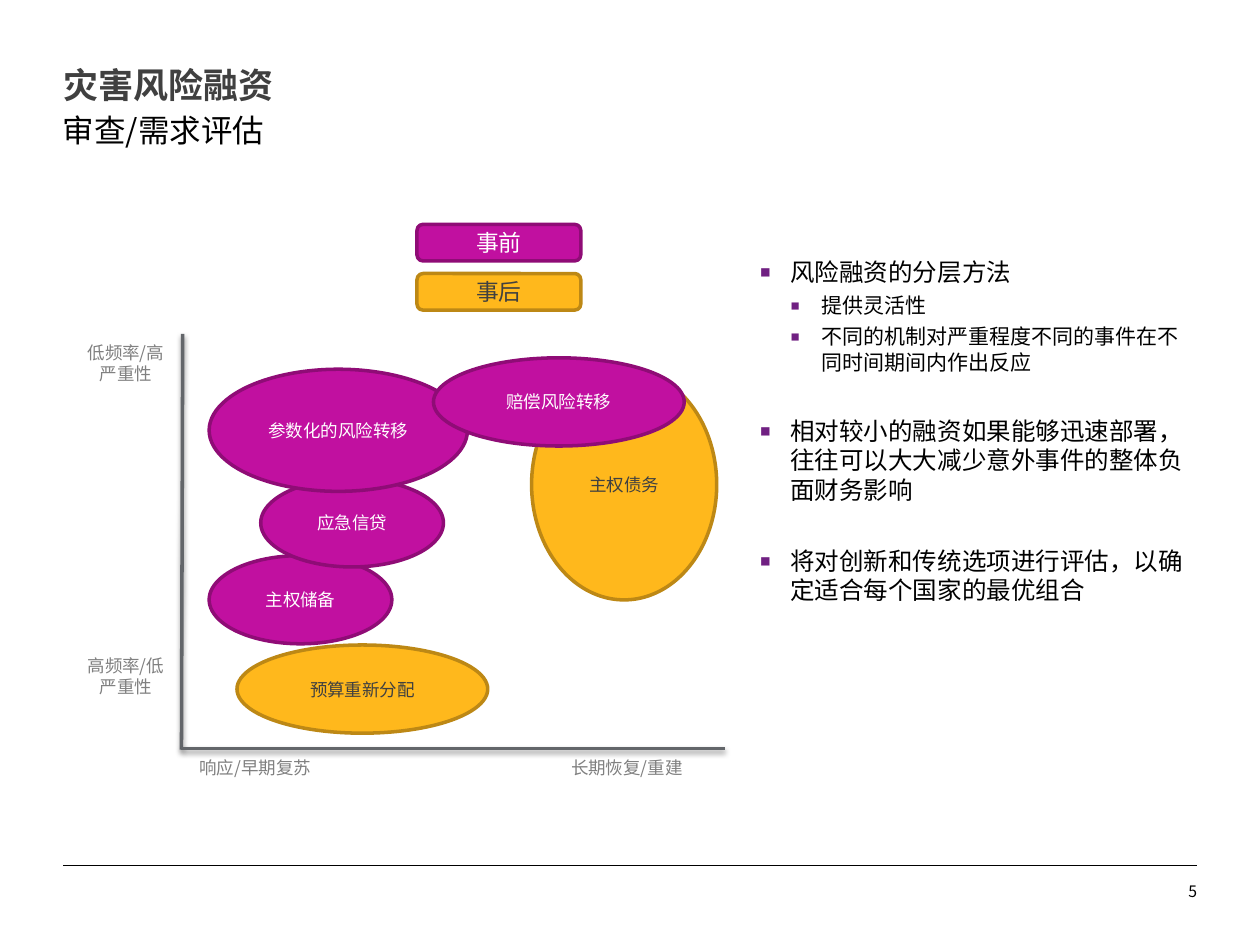
from lxml.etree import SubElement
from pptx import Presentation
from pptx.dml.color import RGBColor
from pptx.enum.shapes import MSO_CONNECTOR, MSO_SHAPE
from pptx.enum.text import MSO_ANCHOR, MSO_AUTO_SIZE, PP_ALIGN
from pptx.oxml.ns import qn
from pptx.util import Pt

FONT = "Noto Sans CJK SC"
BLACK, DARK, GREY, AXIS, BULLET = "000000", "404040", "808080", "63666A", "702082"

# Content: kinds hold fill, outline and text colour
KINDS = {
    "ex ante": ("C110A0", "8F0C76", "FFFFFF"),
    "ex post": ("FFB81C", "BD8815", DARK),
}
# text, kind, left, top, width, height; from back to front
ELLIPSES = [
    ("主权债务", "ex post", 303.8, 211, 105.8, 131.8),
    ("主权储备", "ex ante", 119.5, 317.5, 104.4, 50.4),
    ("应急信贷", "ex ante", 149, 273.6, 104.4, 50.4),
    ("参数化的风险转移", "ex ante", 119.5, 211, 147.6, 69.8),
    ("预算重新分配", "ex post", 135.4, 368.6, 143.3, 50.4),
    ("赔偿风险转移", "ex ante", 247.7, 204.5, 143.3, 50.4),
]
LEGEND = [("事前", "ex ante"), ("事后", "ex post")]
AXES = [(104.4, 190.8, 103.7, 428.4), (414, 427.7, 103.7, 427.7)]
AXIS_LABELS = [
    ("响应/早期复苏", 104.4, 429.1, 82.8, 32.4),
    ("长期恢复/重建", 303.8, 429.1, 108.7, 32.4),
    ("低频率/高严重性", 41, 192.2, 61.9, 70.6),
    ("高频率/低严重性", 41, 370.8, 61.9, 58.3),
]
# text, level, space after
POINTS = [
    ("风险融资的分层方法", 0, 3.5),
    ("提供灵活性", 1, 3.5),
    ("不同的机制对严重程度不同的事件在不同时间期间内作出反应", 1, 23.8),
    ("相对较小的融资如果能够迅速部署，往往可以大大减少意外事件的整体负面财务影响", 0, 23.8),
    ("将对创新和传统选项进行评估，以确定适合每个国家的最优组合", 0, 0),
]


def rgb(value):
    return RGBColor.from_string(value)


def write(p, text, size=10, color=BLACK, bold=False, align=PP_ALIGN.LEFT, after=0):
    p.alignment = align
    p.line_spacing = Pt(size * 1.2)
    p.space_before, p.space_after = Pt(0), Pt(after)
    r = p.add_run()
    r.text = text
    r.font.name, r.font.size, r.font.bold = FONT, Pt(size), bold
    r.font.color.rgb = rgb(color)
    SubElement(r.font._element, qn("a:ea"), typeface=FONT)


def frame(shape, inset=(0, 0), anchor=MSO_ANCHOR.TOP):
    tf = shape.text_frame
    tf.word_wrap = True
    tf.auto_size = MSO_AUTO_SIZE.NONE
    tf.vertical_anchor = anchor
    tf.margin_left = tf.margin_right = Pt(inset[0])
    tf.margin_top = tf.margin_bottom = Pt(inset[1])
    return tf


def text_box(box, inset=(0, 0), anchor=MSO_ANCHOR.TOP):
    return frame(s.shapes.add_textbox(*map(Pt, box)), inset, anchor)


def filled(preset, text, kind, box, size=10):
    fill, outline, color = KINDS[kind]
    sp = s.shapes.add_shape(preset, *map(Pt, box))
    sp.shadow.inherit = False
    sp.fill.solid()
    sp.fill.fore_color.rgb = rgb(fill)
    sp.line.color.rgb = rgb(outline)
    sp.line.width = Pt(2)
    tf = frame(sp, anchor=MSO_ANCHOR.MIDDLE)
    write(tf.paragraphs[0], text, size=size, color=color, align=PP_ALIGN.CENTER)


def line(ends, color, width):
    c = s.shapes.add_connector(MSO_CONNECTOR.STRAIGHT, *map(Pt, ends))
    c.line.color.rgb = rgb(color)
    c.line.width = Pt(width)
    return SubElement(c._element.spPr, qn("a:effectLst"))


def add_shadow(effects):
    shadow = SubElement(effects, qn("a:outerShdw"), blurRad=str(Pt(3.1)),
                        dist=str(Pt(1.6)), dir="5400000", rotWithShape="0")
    clr = SubElement(shadow, qn("a:srgbClr"), val=BLACK)
    SubElement(clr, qn("a:alpha"), val="38000")


def add_bullet(p, level):
    pPr = p._p.get_or_add_pPr()
    pPr.set("marL", str(Pt(22.5 + 18 * level)))
    pPr.set("indent", str(Pt(-22.5)))
    clr = SubElement(pPr, qn("a:buClr"))
    SubElement(clr, qn("a:srgbClr"), val=BULLET)
    SubElement(pPr, qn("a:buSzPct"), val="125000")
    SubElement(pPr, qn("a:buFont"), typeface=FONT)
    SubElement(pPr, qn("a:buChar"), char="▪")


prs = Presentation()
prs.slide_width, prs.slide_height = Pt(720), Pt(540)
s = prs.slides.add_slide(prs.slide_layouts[5])

# Title, subtitle and footer
title = s.shapes.title
title.left, title.top, title.width, title.height = map(Pt, (36, 36, 648, 24.5))
write(frame(title).paragraphs[0], "灾害风险融资", size=20, color=DARK, bold=True)
write(text_box((36, 63.4, 648, 21.6)).paragraphs[0], "审查/需求评估", size=18)
line((36, 494.6, 684, 494.6), BLACK, 0.25)
write(text_box((653.8, 504, 30.2, 10.8), anchor=MSO_ANCHOR.BOTTOM).paragraphs[0],
      "5", size=9, align=PP_ALIGN.RIGHT)

# Bulleted points
tf = text_box((429.1, 146.9, 249.8, 321.8))
for i, (text, level, after) in enumerate(POINTS):
    p = tf.add_paragraph() if i else tf.paragraphs[0]
    p.level = level
    add_bullet(p, level)
    write(p, text, size=14 - 2 * level, after=after)

# Axes and their labels
for ends in AXES:
    add_shadow(line(ends, AXIS, 2))
for text, *box in AXIS_LABELS:
    write(text_box(box, inset=(7.2, 3.6)).paragraphs[0], text, color=GREY,
          align=PP_ALIGN.CENTER)

# Financing instruments
for text, kind, *box in ELLIPSES:
    filled(MSO_SHAPE.OVAL, text, kind, box)

# Legend
for i, (text, kind) in enumerate(LEGEND):
    filled(MSO_SHAPE.ROUNDED_RECTANGLE, text, kind,
           (238.3, 128.2 + 28.1 * i, 93.6, 20.9), size=13)

prs.save("out.pptx")
